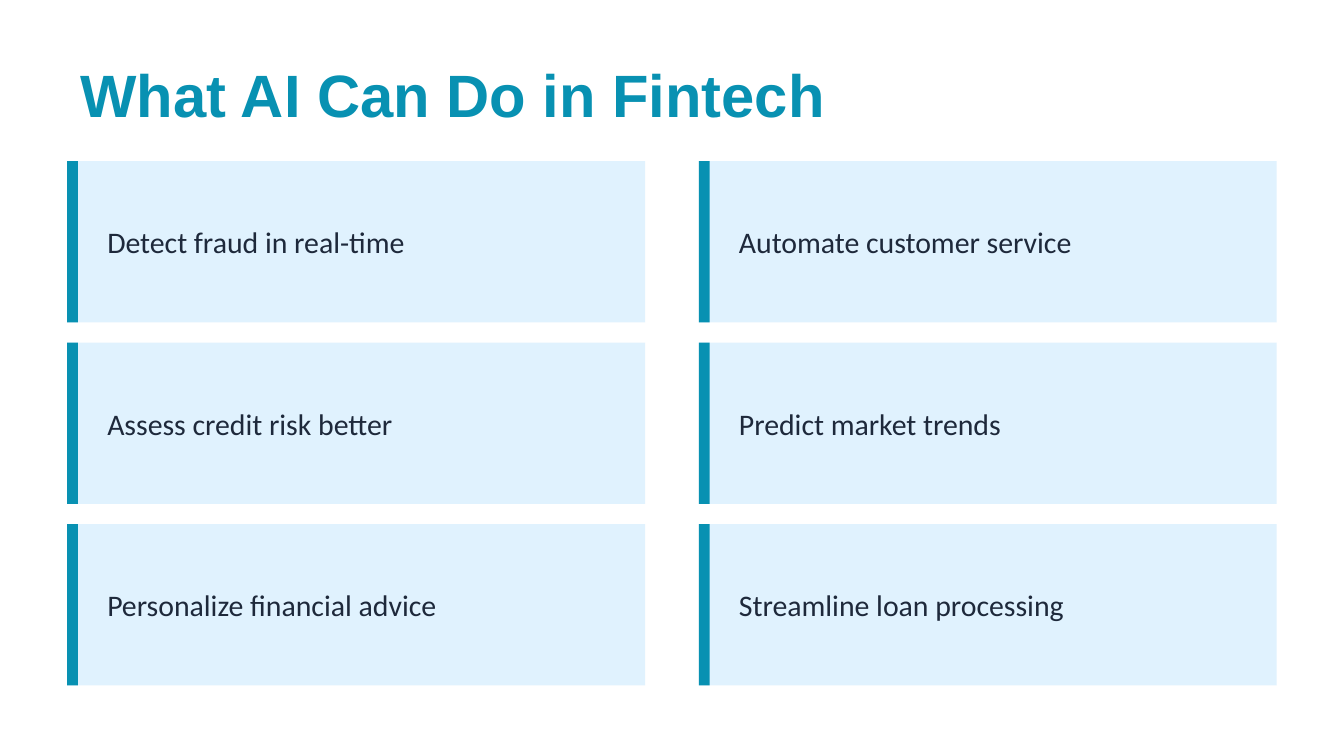
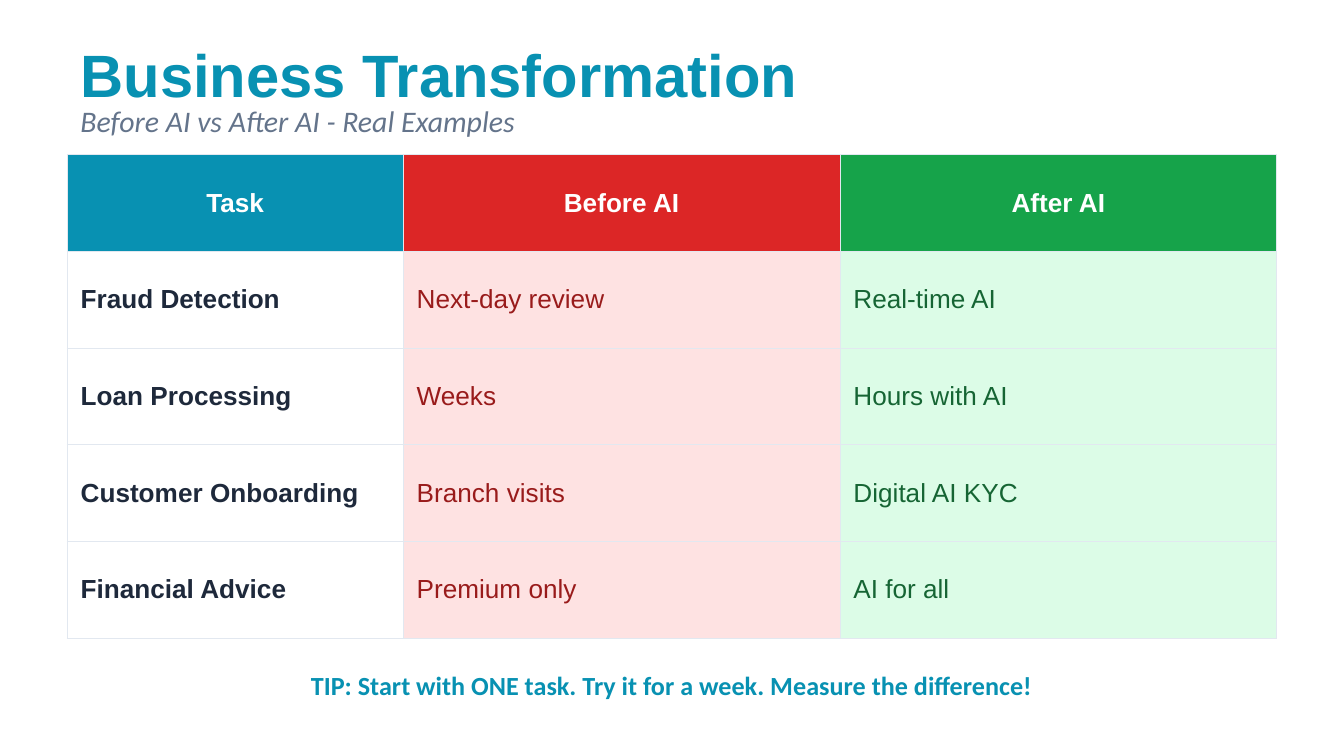
from dataclasses import dataclass

from lxml import etree
from pptx import Presentation
from pptx.dml.color import RGBColor
from pptx.enum.shapes import MSO_SHAPE
from pptx.enum.text import MSO_ANCHOR, MSO_AUTO_SIZE, PP_ALIGN
from pptx.oxml.ns import qn
from pptx.util import Pt

RECTANGLE = MSO_SHAPE.RECTANGLE
MIDDLE = MSO_ANCHOR.MIDDLE
NO_AUTOFIT = MSO_AUTO_SIZE.NONE
LEFT, CENTER = PP_ALIGN.LEFT, PP_ALIGN.CENTER
TITLE_ONLY = 5
BORDER_SIDES = ("a:lnL", "a:lnR", "a:lnT", "a:lnB")


@dataclass(frozen=True)
class Theme:
    accent: str = "0891B2"
    card: str = "E0F2FE"
    ink: str = "1E293B"
    muted: str = "64748B"
    white: str = "FFFFFF"
    border: str = "E2E8F0"
    before: str = "DC2626"
    before_tint: str = "FEE2E2"
    before_ink: str = "991B1B"
    after: str = "16A34A"
    after_tint: str = "DCFCE7"
    after_ink: str = "166534"
    heading_font: str = "Arial"
    body_font: str = "Calibri"
    title_size: int = 32
    body_size: int = 16
    small_size: int = 14


THEME = Theme()
MARGIN = 36
CONTENT_WIDTH = 648


def write(frame, text, font=THEME.body_font, size=THEME.body_size,
          color=THEME.ink, bold=False, italic=False, align=LEFT):
    paragraph = frame.paragraphs[0]
    paragraph.alignment = align
    run = paragraph.add_run()
    run.text = text
    run.font.name = font
    run.font.size = Pt(size)
    run.font.bold = bold
    run.font.italic = italic
    run.font.color.rgb = RGBColor.from_string(color)


class Deck:
    def __init__(self, theme):
        self.theme = theme
        self.presentation = Presentation()
        self.presentation.slide_width = Pt(720)
        self.presentation.slide_height = Pt(405)
        self.slide = None

    def new_slide(self, title, top, height):
        layout = self.presentation.slide_layouts[TITLE_ONLY]
        self.slide = self.presentation.slides.add_slide(layout)
        heading = self.slide.shapes.title
        heading.left, heading.top = Pt(MARGIN), Pt(top)
        heading.width, heading.height = Pt(CONTENT_WIDTH), Pt(height)
        self.fill_frame(heading.text_frame, title, font=self.theme.heading_font,
                        size=self.theme.title_size, color=self.theme.accent, bold=True)

    def fill_frame(self, frame, text, **style):
        frame.word_wrap = True
        frame.auto_size = NO_AUTOFIT
        frame.vertical_anchor = MIDDLE
        write(frame, text, **style)

    def text(self, text, left, top, width, height, **style):
        box = self.slide.shapes.add_textbox(Pt(left), Pt(top), Pt(width), Pt(height))
        self.fill_frame(box.text_frame, text, **style)

    def block(self, left, top, width, height, color):
        block = self.slide.shapes.add_shape(
            RECTANGLE, Pt(left), Pt(top), Pt(width), Pt(height))
        block.shadow.inherit = False
        block.fill.solid()
        block.fill.fore_color.rgb = RGBColor.from_string(color)
        block.line.fill.background()

    def card(self, text, left, top, width, height):
        self.block(left, top, width, height, self.theme.card)
        self.block(left, top, 5.76, height, self.theme.accent)
        self.text(text, left + 14.4, top + 10.8, width - 28.8, height - 21.6)

    def table(self, rows, column_widths, top, row_height, header_styles, body_styles):
        grid = self.slide.shapes.add_table(
            len(rows), len(column_widths), Pt(MARGIN), Pt(top),
            Pt(sum(column_widths)), Pt(row_height * len(rows))).table
        for column, width in zip(grid.columns, column_widths):
            column.width = Pt(width)
        for row_index, row in enumerate(rows):
            grid.rows[row_index].height = Pt(row_height)
            styles = body_styles if row_index else header_styles
            for column_index, (text, style) in enumerate(zip(row, styles)):
                self.cell(grid.cell(row_index, column_index), text, **style)

    def cell(self, cell, text, fill=None, **style):
        cell.vertical_anchor = MIDDLE
        self.cell_borders(cell)
        if fill:
            cell.fill.solid()
            cell.fill.fore_color.rgb = RGBColor.from_string(fill)
        else:
            cell.fill.background()
        write(cell.text_frame, text, font=self.theme.heading_font,
              size=self.theme.small_size, **style)

    def cell_borders(self, cell):
        properties = cell._tc.get_or_add_tcPr()
        for side in BORDER_SIDES:
            line = etree.SubElement(properties, qn(side), w=str(Pt(0.5)))
            solid = etree.SubElement(line, qn("a:solidFill"))
            etree.SubElement(solid, qn("a:srgbClr"), val=self.theme.border)


def capabilities_slide(deck):
    deck.new_slide("What AI Can Do in Fintech", top=28.8, height=43.2)
    capabilities = (
        ("Detect fraud in real-time", "Assess credit risk better",
         "Personalize financial advice"),
        ("Automate customer service", "Predict market trends",
         "Streamline loan processing"),
    )
    width, height, column_gap, row_gap = 309.6, 86.4, 28.8, 10.8
    for column, group in enumerate(capabilities):
        for row, capability in enumerate(group):
            deck.card(capability, MARGIN + column * (width + column_gap),
                      86.4 + row * (height + row_gap), width, height)


def transformation_slide(deck):
    theme = deck.theme
    deck.new_slide("Business Transformation", top=21.6, height=36)
    deck.text("Before AI vs After AI - Real Examples", MARGIN, 54, CONTENT_WIDTH, 21.6,
              color=theme.muted, italic=True)
    comparison = (
        ("Task", "Before AI", "After AI"),
        ("Fraud Detection", "Next-day review", "Real-time AI"),
        ("Loan Processing", "Weeks", "Hours with AI"),
        ("Customer Onboarding", "Branch visits", "Digital AI KYC"),
        ("Financial Advice", "Premium only", "AI for all"),
    )
    header_styles = [dict(fill=fill, color=theme.white, bold=True, align=CENTER)
                     for fill in (theme.accent, theme.before, theme.after)]
    body_styles = (
        dict(bold=True),
        dict(fill=theme.before_tint, color=theme.before_ink),
        dict(fill=theme.after_tint, color=theme.after_ink),
    )
    deck.table(comparison, (180, 234, 234), 82.8, 51.84, header_styles, body_styles)
    deck.text("TIP: Start with ONE task. Try it for a week. Measure the difference!",
              MARGIN, 352.8, CONTENT_WIDTH, 28.8, size=theme.small_size,
              color=theme.accent, bold=True, align=CENTER)


def main():
    deck = Deck(THEME)
    capabilities_slide(deck)
    transformation_slide(deck)
    deck.presentation.save("out.pptx")


if __name__ == "__main__":
    main()
